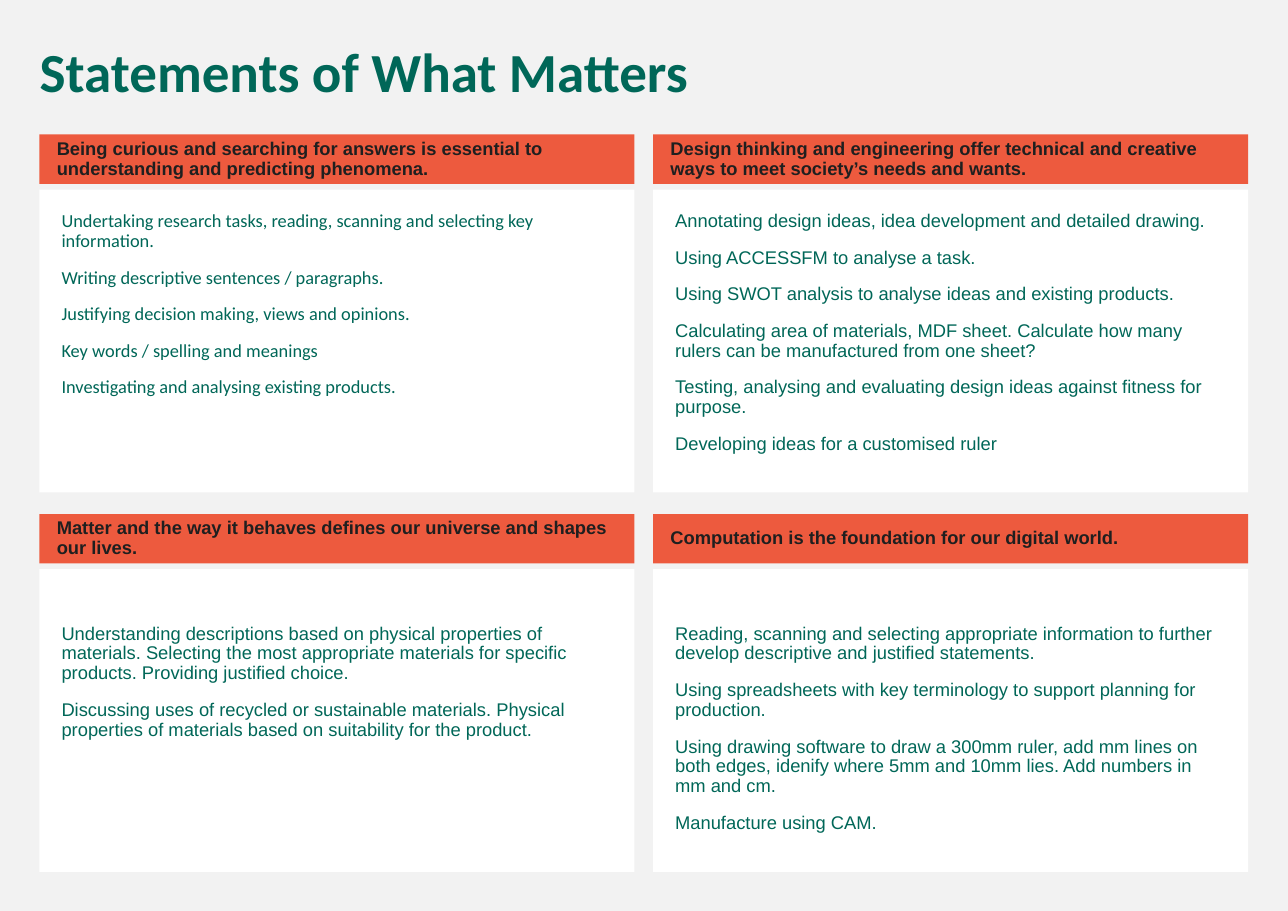
from pptx import Presentation
from pptx.dml.color import RGBColor
from pptx.enum.shapes import MSO_SHAPE
from pptx.enum.text import MSO_ANCHOR, MSO_AUTO_SIZE, PP_ALIGN
from pptx.util import Cm, Pt

GREY = RGBColor(0xF2, 0xF2, 0xF2)
WHITE = RGBColor(0xFF, 0xFF, 0xFF)
ORANGE = RGBColor(0xED, 0x5A, 0x3E)
GREEN = RGBColor(0x00, 0x67, 0x58)
BLACK = RGBColor(0x1F, 0x1F, 0x1F)

# Lengths in centimetres
LEFT, TOP = 0.91, 3.1
COLUMN_PITCH, ROW_PITCH = 14.15, 8.75
CARD_WIDTH, HEADING_HEIGHT = 13.72, 1.14
BODY_OFFSET, BODY_HEIGHT = 1.27, 6.98
BODY_INSET, LOWER_ROW_INSET = 0.51, 1.27

# Rows of cards: heading, body font, statements
CARD_ROWS = [
    [
        ("Being curious and searching for answers is essential to understanding and predicting phenomena.",
         "Calibri",
         ["Undertaking research tasks, reading, scanning and selecting key information.",
          "Writing descriptive sentences / paragraphs.",
          "Justifying decision making, views and opinions.",
          "Key words / spelling and meanings",
          "Investigating and analysing existing products."]),
        ("Design thinking and engineering offer technical and creative ways to meet society’s needs and wants.",
         "Arial",
         ["Annotating design ideas, idea development and detailed drawing.",
          "Using ACCESSFM to analyse a task.",
          "Using SWOT analysis to analyse ideas and existing products.",
          "Calculating area of materials, MDF sheet. Calculate how many rulers can be manufactured from one sheet?",
          "Testing, analysing and evaluating design ideas against fitness for purpose.",
          "Developing ideas for a customised ruler"]),
    ],
    [
        ("Matter and the way it behaves defines our universe and shapes our lives.",
         "Arial",
         ["Understanding descriptions based on physical properties of materials. Selecting the most "
          "appropriate materials for specific products. Providing justified choice.",
          "Discussing uses of recycled or sustainable materials. Physical properties of materials "
          "based on suitability for the product."]),
        ("Computation is the foundation for our digital world.",
         "Arial",
         ["Reading, scanning and selecting appropriate information to further develop descriptive "
          "and justified statements.",
          "Using spreadsheets with key terminology to support planning for production.",
          "Using drawing software to draw a 300mm ruler, add mm lines on both edges, idenify where "
          "5mm and 10mm lies. Add numbers in mm and cm.",
          "Manufacture using CAM."]),
    ],
]


def write_paragraphs(text_frame, texts, font_name, size, color, bold=False):
    for index, text in enumerate(texts):
        paragraph = text_frame.add_paragraph() if index else text_frame.paragraphs[0]
        paragraph.alignment = PP_ALIGN.LEFT
        paragraph.line_spacing = 0.9
        paragraph.space_before = Pt(11)
        run = paragraph.add_run()
        run.text = text
        run.font.name = font_name
        run.font.size = Pt(size)
        run.font.bold = bold
        run.font.color.rgb = color


def add_panel(slide, left, top, width, height, fill, anchor, insets):
    """Add a borderless rectangle; insets are left, top, right, bottom in cm."""
    shape = slide.shapes.add_shape(
        MSO_SHAPE.RECTANGLE, Cm(left), Cm(top), Cm(width), Cm(height))
    shape.shadow.inherit = False
    shape.fill.solid()
    shape.fill.fore_color.rgb = fill
    shape.line.fill.background()
    text_frame = shape.text_frame
    text_frame.word_wrap = True
    text_frame.vertical_anchor = anchor
    (text_frame.margin_left, text_frame.margin_top,
     text_frame.margin_right, text_frame.margin_bottom) = map(Cm, insets)
    return text_frame


def add_title(slide, left, top, width, height):
    title = slide.shapes.title
    title.left, title.top, title.width, title.height = map(Cm, (left, top, width, height))
    title.text_frame.auto_size = MSO_AUTO_SIZE.NONE
    title.text_frame.vertical_anchor = MSO_ANCHOR.TOP
    write_paragraphs(title.text_frame, ["Statements of What Matters"], "Calibri", 36, GREEN, True)


def add_card(slide, left, top, card, body_top_inset):
    heading, body_font, statements = card
    heading_frame = add_panel(slide, left, top, CARD_WIDTH, HEADING_HEIGHT, ORANGE,
                              MSO_ANCHOR.MIDDLE, (0.4, 0.13, 0.25, 0.13))
    write_paragraphs(heading_frame, [heading], "Arial", 12, BLACK, True)
    body_frame = add_panel(slide, left, top + BODY_OFFSET, CARD_WIDTH, BODY_HEIGHT, WHITE,
                           MSO_ANCHOR.TOP, (BODY_INSET, body_top_inset, BODY_INSET, BODY_INSET))
    write_paragraphs(body_frame, statements, body_font, 12, GREEN)


def main():
    presentation = Presentation()
    presentation.slide_width = Cm(29.7)
    presentation.slide_height = Cm(21)
    slide = presentation.slides.add_slide(presentation.slide_layouts.get_by_name("Title Only"))
    slide.background.fill.solid()
    slide.background.fill.fore_color.rgb = GREY

    add_title(slide, 0.66, 0.91, 28.14, 1.65)
    for row, cards in enumerate(CARD_ROWS):
        body_top_inset = LOWER_ROW_INSET if row else BODY_INSET
        for column, card in enumerate(cards):
            add_card(slide, LEFT + column * COLUMN_PITCH, TOP + row * ROW_PITCH,
                     card, body_top_inset)
    presentation.save("out.pptx")


if __name__ == "__main__":
    main()
